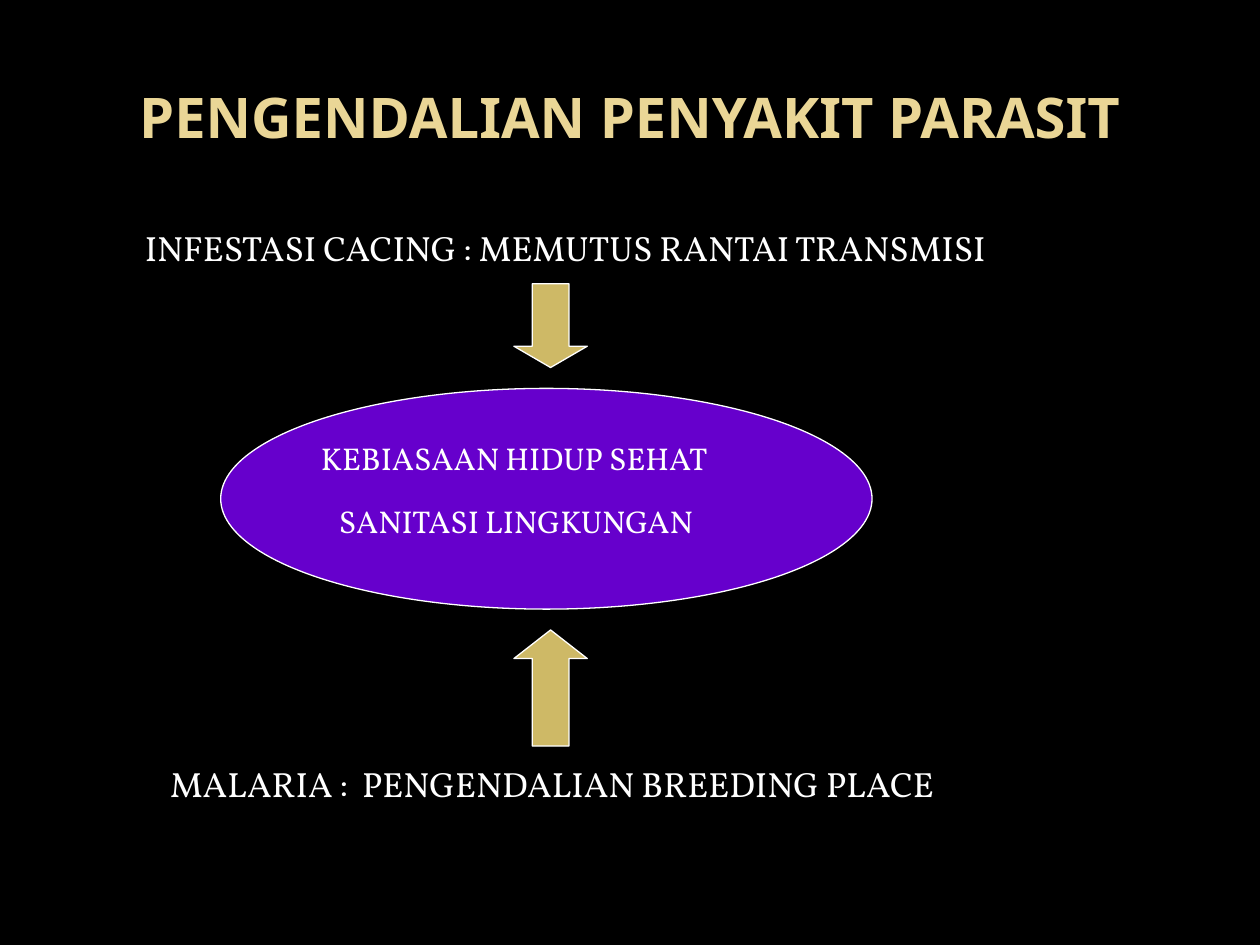
import pptx
import pptx.util
import pptx.dml.color
import pptx.enum.shapes
import pptx.enum.text

Cm = pptx.util.Cm
Pt = pptx.util.Pt
RGBColor = pptx.dml.color.RGBColor
Shape = pptx.enum.shapes.MSO_SHAPE
Anchor = pptx.enum.text.MSO_ANCHOR
Align = pptx.enum.text.PP_ALIGN

BLACK = RGBColor(0x00, 0x00, 0x00)
WHITE = RGBColor(0xFF, 0xFF, 0xFF)
CREAM = RGBColor(0xEA, 0xD6, 0x96)
GOLD = RGBColor(0xCE, 0xB9, 0x66)
PURPLE = RGBColor(0x66, 0x00, 0xCC)


def add_text(slide, box, text, size, color=WHITE, font="Vollkorn", wrap=False):
    text_box = slide.shapes.add_textbox(*map(Cm, box))
    text_frame = text_box.text_frame
    text_frame.word_wrap = wrap
    text_frame.text = text
    run_font = text_frame.paragraphs[0].runs[0].font
    run_font.name = font
    run_font.size = Pt(size)
    run_font.color.rgb = color
    return text_frame


def add_outlined_shape(slide, kind, box, fill):
    shape = slide.shapes.add_shape(kind, *map(Cm, box))
    shape.shadow.inherit = False
    shape.fill.solid()
    shape.fill.fore_color.rgb = fill
    shape.line.color.rgb = WHITE
    shape.line.width = Pt(0.75)
    return shape


def add_title(slide, box):
    text_frame = add_text(slide, box, "PENGENDALIAN PENYAKIT PARASIT", 32,
                          CREAM, "Noto Sans", wrap=True)
    text_frame.vertical_anchor = Anchor.MIDDLE
    paragraph = text_frame.paragraphs[0]
    paragraph.alignment = Align.CENTER
    paragraph.runs[0].font.bold = True


def add_habits_ellipse(slide, box):
    left, top, width, height = box
    add_outlined_shape(slide, Shape.OVAL, box, PURPLE)
    add_text(slide, (left + 1.77, top + 0.89, 8.56, 1.02),
             "KEBIASAAN HIDUP SEHAT", 18)
    add_text(slide, (left + 2.13, top + 2.16, 7.77, 1.02),
             "SANITASI LINGKUNGAN", 18)


def add_arrow(slide, kind, box, head):
    arrow = add_outlined_shape(slide, kind, box, GOLD)
    arrow.adjustments[0] = 0.5
    arrow.adjustments[1] = head


def add_control_diagram(slide, box):
    left, top, width, height = box
    arrow_left = left + 7.18
    add_text(slide, (left - 0.51, top, 20, 1.27),
             "INFESTASI CACING : MEMUTUS RANTAI TRANSMISI", 20)
    add_arrow(slide, Shape.DOWN_ARROW, (arrow_left, top + 1.27, 1.48, 1.69), 0.29)
    add_habits_ellipse(slide, (left + 1.27, top + 3.38, 13.13, 4.45))
    add_arrow(slide, Shape.UP_ARROW, (arrow_left, top + 8.25, 1.48, 2.34), 0.39)
    add_text(slide, (left, top + height - 1.09, width, 1.09),
             "MALARIA :  PENGENDALIAN BREEDING PLACE", 20)


def main():
    presentation = pptx.Presentation()
    presentation.slide_width = Cm(25.4)
    presentation.slide_height = Cm(19.05)
    slide = presentation.slides.add_slide(presentation.slide_layouts[6])
    slide.background.fill.solid()
    slide.background.fill.fore_color.rgb = BLACK
    add_title(slide, (1.27, 0.76, 22.86, 3.18))
    add_control_diagram(slide, (3.18, 4.45, 16.33, 11.88))
    presentation.save("out.pptx")


if __name__ == "__main__":
    main()
